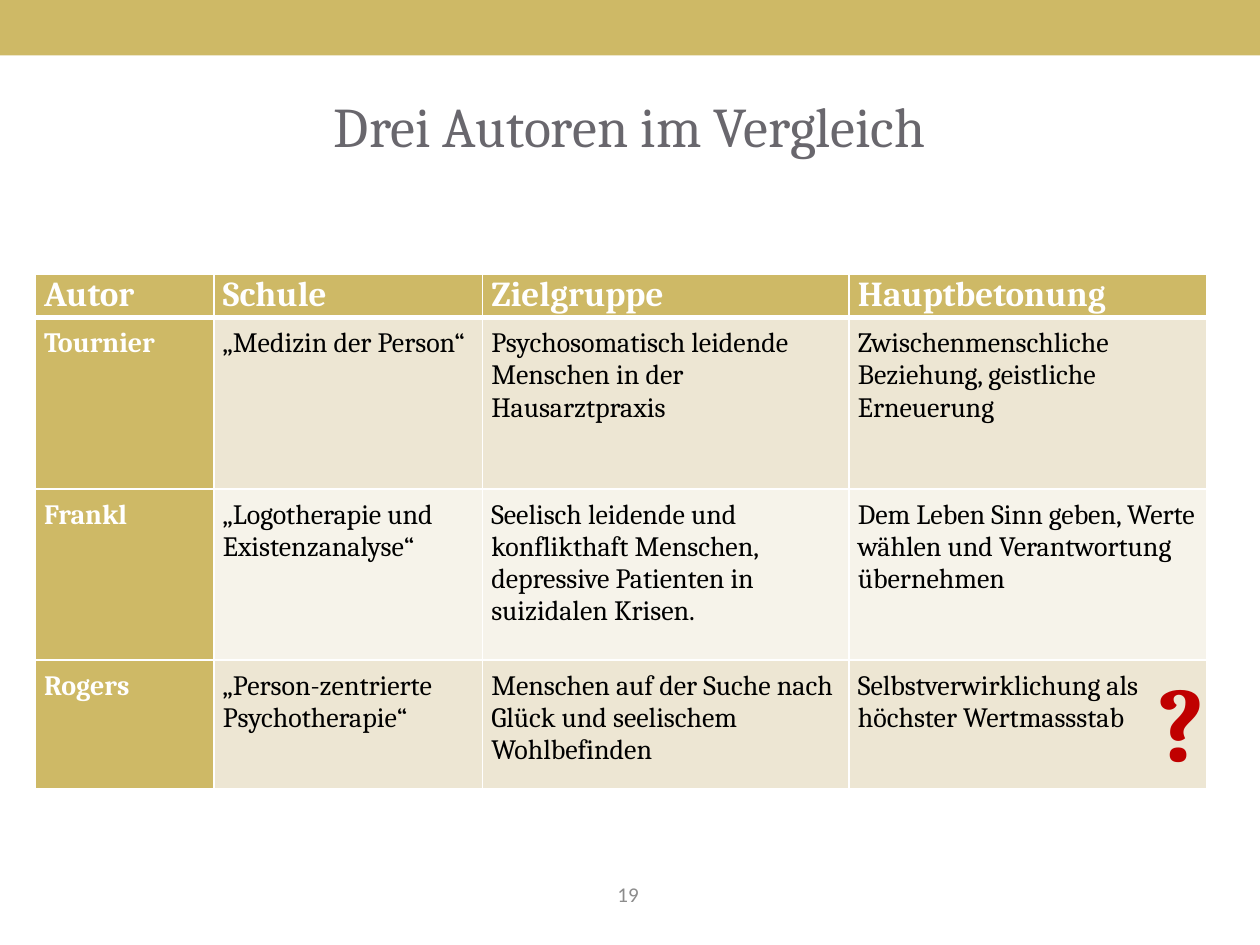
"""Build a slide that compares three authors in a table."""
from lxml import etree
from pptx import Presentation
from pptx.dml.color import RGBColor
from pptx.enum.shapes import MSO_SHAPE
from pptx.enum.text import MSO_ANCHOR, PP_ALIGN
from pptx.oxml.ns import qn
from pptx.util import Inches, Pt

RECTANGLE = MSO_SHAPE.RECTANGLE
MIDDLE, TOP = MSO_ANCHOR.MIDDLE, MSO_ANCHOR.TOP
CENTER, LEFT = PP_ALIGN.CENTER, PP_ALIGN.LEFT

TITLE = "Drei Autoren im Vergleich"
PAGE_NUMBER = "19"
MARK = "?"
ROWS = [
    ("Autor", "Schule", "Zielgruppe", "Hauptbetonung"),
    ("Tournier", "„Medizin der Person“",
     "Psychosomatisch leidende Menschen in der Hausarztpraxis",
     "Zwischenmenschliche Beziehung, geistliche Erneuerung"),
    ("Frankl", "„Logotherapie und\vExistenzanalyse“",
     "Seelisch leidende und konflikthaft Menschen, depressive Patienten in suizidalen Krisen.",
     "Dem Leben Sinn geben, Werte wählen und Verantwortung übernehmen"),
    ("Rogers", "„Person-zentrierte\vPsychotherapie“",
     "Menschen auf der Suche nach Glück und seelischem Wohlbefinden",
     "Selbstverwirklichung als höchster Wertmassstab"),
]

THEME = {
    "serif": "Cambria", "sans": "Calibri",
    "gold": "CEB966", "bands": ("F6F3EA", "EDE6D3"), "white": "FFFFFF",
    "black": "000000", "title": "69676D", "number": "8C8C8C", "mark": "C00000",
    "title_size": 32, "header_size": 20, "body_size": 16, "number_size": 12, "mark_size": 60,
    "rule": 1, "header_rule": 3,
}
SLIDE_WIDTH, SLIDE_HEIGHT = 10, 7.5
BAND_HEIGHT = 0.44
TITLE_BOX = (0.5, 0.36, 9, 1.26)
NUMBER_BOX = (3.82, 6.9, 2.33, 0.4)
MARK_BOX = (9.09, 5.16, 0.67, 1.11)
TABLE_LEFT, TABLE_TOP = 0.28, 2.18
COLUMN_WIDTHS = (1.42, 2.13, 2.91, 2.84)
ROW_HEIGHTS = (0.34, 1.36, 1.36, 1.02)
CELL_SIDE, CELL_TOP = 0.07, 0.08


def color(name):
    return RGBColor.from_string(THEME.get(name, name))


def style_text(text_frame, font_name, size, color_name, bold=False, align=LEFT):
    for paragraph in text_frame.paragraphs:
        paragraph.alignment = align
        for run in paragraph.runs:
            run.font.name = THEME[font_name]
            run.font.size = Pt(THEME[size])
            run.font.bold = bold
            run.font.color.rgb = color(color_name)


def add_text(slide, box, text, anchor, **style):
    shape = slide.shapes.add_textbox(*map(Inches, box))
    text_frame = shape.text_frame
    text_frame.word_wrap = True
    text_frame.vertical_anchor = anchor
    text_frame.text = text
    style_text(text_frame, **style)


def add_band(slide):
    band = slide.shapes.add_shape(RECTANGLE, 0, 0, Inches(SLIDE_WIDTH), Inches(BAND_HEIGHT))
    band.shadow.inherit = False
    band.fill.solid()
    band.fill.fore_color.rgb = color("gold")
    band.line.fill.background()


def set_borders(cell, widths):
    properties = cell._tc.get_or_add_tcPr()
    for side, width in widths.items():
        line = etree.SubElement(properties, qn(f"a:ln{side}"), w=str(Pt(width)))
        fill = etree.SubElement(line, qn("a:solidFill"))
        etree.SubElement(fill, qn("a:srgbClr"), val=THEME["white"])


def format_cell(cell, row, column):
    is_header = row == 0
    is_label = is_header or column == 0
    cell.margin_left = cell.margin_right = Inches(CELL_SIDE)
    cell.margin_top = Inches(0 if is_header else CELL_TOP)
    cell.margin_bottom = 0
    rule, header_rule = THEME["rule"], THEME["header_rule"]
    set_borders(cell, {"L": rule, "R": rule,
                       "T": header_rule if row == 1 else rule,
                       "B": header_rule if is_header else rule})
    cell.fill.solid()
    cell.fill.fore_color.rgb = color("gold" if is_label else THEME["bands"][row % 2])
    style_text(cell.text_frame, "serif", "header_size" if is_header else "body_size",
               "white" if is_label else "black", bold=is_label)


def add_comparison(slide):
    frame = slide.shapes.add_table(
        len(ROWS), len(COLUMN_WIDTHS), Inches(TABLE_LEFT), Inches(TABLE_TOP),
        Inches(sum(COLUMN_WIDTHS)), Inches(sum(ROW_HEIGHTS)))
    table = frame.table
    table.first_col = True
    for column, width in zip(table.columns, COLUMN_WIDTHS):
        column.width = Inches(width)
    for row, height in zip(table.rows, ROW_HEIGHTS):
        row.height = Inches(height)
    for row, texts in enumerate(ROWS):
        for column, text in enumerate(texts):
            cell = table.cell(row, column)
            cell.text_frame.text = text
            format_cell(cell, row, column)


def main():
    presentation = Presentation()
    presentation.slide_width = Inches(SLIDE_WIDTH)
    presentation.slide_height = Inches(SLIDE_HEIGHT)
    slide = presentation.slides.add_slide(presentation.slide_layouts[6])
    add_band(slide)
    add_text(slide, NUMBER_BOX, PAGE_NUMBER, MIDDLE, font_name="sans",
             size="number_size", color_name="number", align=CENTER)
    add_comparison(slide)
    add_text(slide, TITLE_BOX, TITLE, MIDDLE, font_name="serif",
             size="title_size", color_name="title", align=CENTER)
    add_text(slide, MARK_BOX, MARK, TOP, font_name="serif",
             size="mark_size", color_name="mark", bold=True)
    presentation.save("out.pptx")


if __name__ == "__main__":
    main()
